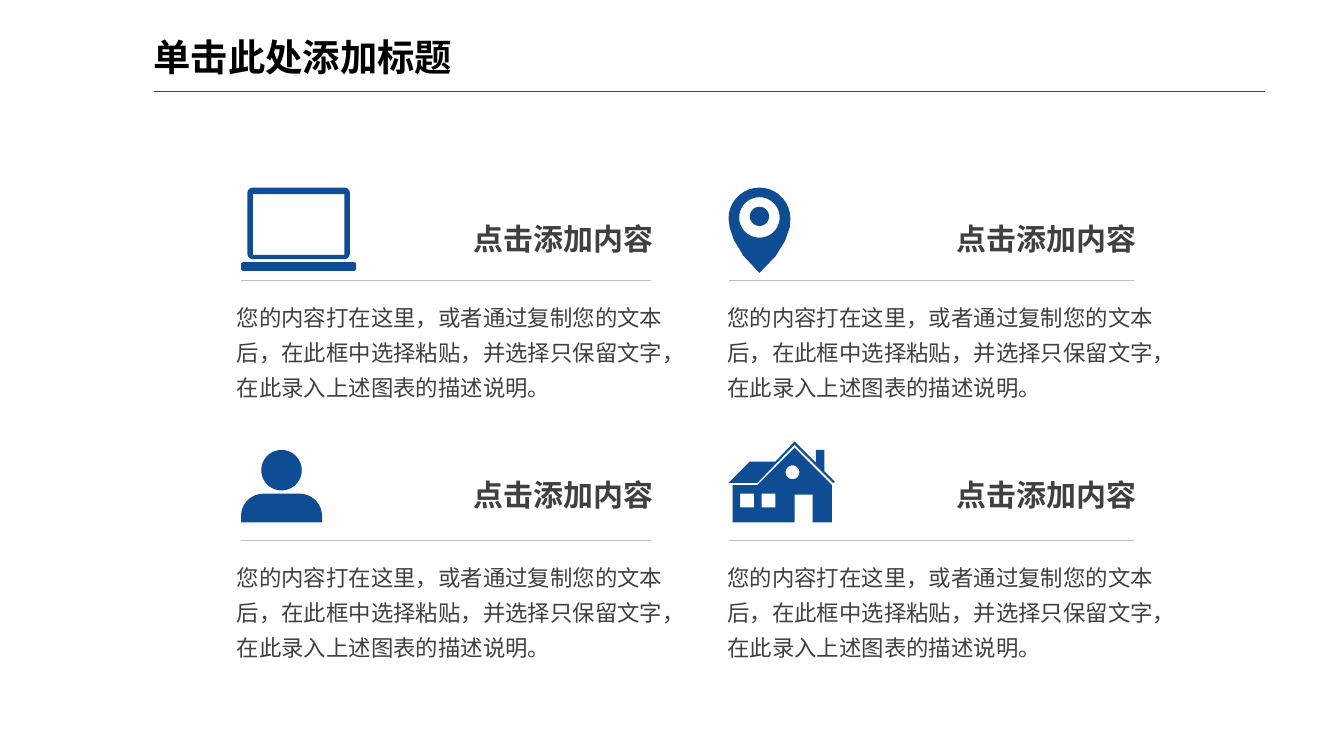
from math import cos, radians, sin

from lxml import etree
from pptx import Presentation, util as u
from pptx.dml.color import RGBColor
from pptx.enum import shapes, text
from pptx.oxml import ns

# Grid of square cells: the slide is 126 columns by 70.9 rows
CELL = u.Inches(0.1)
WIDE, HIGH = 126, 70.9

FONT = "Noto Sans CJK SC"
BLUE = RGBColor(0x0E, 0x4D, 0x93)
GREY = RGBColor(0xBF, 0xBF, 0xBF)
DARK = RGBColor(0x40, 0x40, 0x40)
BLACK = RGBColor(0, 0, 0)

TITLE = "单击此处添加标题"
HEAD = "点击添加内容"
BODY = "您的内容打在这里，或者通过复制您的文本后，在此框中选择粘贴，并选择只保留文字，在此录入上述图表的描述说明。"

COLS = [(22.6, 61, 21.3), (68.3, 106.3, 67.3)]  # rule left, rule right, body left
ROWS = [(26.3, 20.2), (50.7, 44.2)]  # rule, heading top


def cells(*nums):
    return [u.Emu(round(n * CELL)) for n in nums]


# Outlines, in cells from the corner of an icon
def arc(x, y, r, start=0, end=360):
    steps = max(6, (end - start) // 10)
    turns = [radians(start + (end - start) * i / steps) for i in range(steps + 1)]
    return [(x + r * cos(t), y + r * sin(t)) for t in turns]


def box(x, y, w, h, r=0):
    if not r:
        return [(x, y), (x + w, y), (x + w, y + h), (x, y + h)]
    return (arc(x + r, y + r, r, 180, 270) + arc(x + w - r, y + r, r, 270, 360)
            + arc(x + w - r, y + h - r, r, 0, 90) + arc(x + r, y + h - r, r, 90, 180))


def laptop():
    return [box(0, 7, 10.8, 0.8, 0.2), box(0.6, 0, 9.6, 6.7, 0.5),
            box(1.1, 0.6, 8.6, 5.7)]


def pin():
    tip = [(5.75, 3.7), (5.3, 5), (4.4, 6.45), (2.9, 8),
           (1.4, 6.4), (0.5, 4.9), (0.1, 3.7)]
    return [arc(2.9, 2.9, 2.9, 180, 360) + tip, arc(2.9, 2.8, 1.9), arc(2.9, 2.7, 0.9)]


def person():
    body = arc(2.1, 6.2, 2.1, 180, 270) + arc(5.5, 6.2, 2.1, 270, 360)
    return [arc(3.8, 1.9, 1.9), body + [(7.6, 6.8), (0, 6.8)]]


def house():
    walls = [(9.7, 4.1), (6.2, 0.6), (2.7, 4.1), (0.4, 4.1), (0.4, 7.6),
             (6.2, 7.6), (6.2, 5), (7.9, 5), (7.9, 7.6), (9.7, 7.6)]
    roof = [(10, 3.8), (9.8, 3.9), (6.2, 0.3), (2.7, 3.9), (0, 3.9), (2, 1.9),
            (4.4, 1.9), (6.2, 0), (8.2, 2), (8.2, 0.8), (9, 0.8), (9, 2.8)]
    panes = [box(x, 4.9, 1.3, 1.3) for x in (1.1, 3.1)]
    return [walls, *panes, arc(6, 2.9, 0.65), roof]


# Elements
def add_icon(slide, left, top, rings):
    paths = [[cells(left + x, top + y) for x, y in ring] for ring in rings]
    pen = slide.shapes.build_freeform(*paths[0][0])
    for i, pts in enumerate(paths):
        if i:
            pen.move_to(*pts[0])
        pen.add_line_segments(pts[1:], close=True)
    icon = pen.convert_to_shape()
    icon.shadow.inherit = False
    icon.fill.solid()
    icon.fill.fore_color.rgb = BLUE
    icon.line.fill.background()


def add_rule(slide, left, right, y, color):
    rule = slide.shapes.add_connector(
        shapes.MSO_CONNECTOR.STRAIGHT, *cells(left, y, right, y))
    rule.line.color.rgb = color
    rule.line.width = u.Pt(0.75)
    etree.SubElement(rule._element.spPr, ns.qn("a:effectLst"))


def add_run(para, words, size, color, bold=False):
    run = para.add_run()
    run.text = words
    font = run.font
    font.size, font.bold, font.name = u.Pt(size), bold, FONT
    font.color.rgb = color
    props = run._r.get_or_add_rPr()
    props.set("lang", "zh-CN")
    etree.SubElement(props, ns.qn("a:ea")).set("typeface", FONT)


def add_title(slide):
    title = slide.shapes.title
    title.left, title.top, title.width, title.height = cells(13.4, 2.7, 105.2, 5.3)
    frame = title.text_frame
    frame.vertical_anchor = text.MSO_ANCHOR.MIDDLE
    para = frame.paragraphs[0]
    para.alignment = text.PP_ALIGN.LEFT
    add_run(para, TITLE, 25.2, BLACK, True)


def add_text(slide, place, wrap):
    frame = slide.shapes.add_textbox(*cells(*place)).text_frame
    frame.word_wrap = wrap
    frame.margin_left = frame.margin_right = u.Inches(0.09)
    frame.margin_top = frame.margin_bottom = u.Inches(0.05)
    return frame


def add_card(slide, col, row, icon, top):
    left, right, inset = col
    rule, head = row
    add_icon(slide, left, top, icon())
    add_rule(slide, left, right, rule, GREY)

    frame = add_text(slide, (right - 17.7, head, 18.8, 4.3), False)
    frame.vertical_anchor = text.MSO_ANCHOR.MIDDLE
    para = frame.paragraphs[0]
    para.alignment = text.PP_ALIGN.RIGHT
    add_run(para, HEAD, 20.2, DARK, True)

    para = add_text(slide, (inset, rule + 1, 42, 10.9), True).paragraphs[0]
    para.line_spacing = 1.3
    add_run(para, BODY, 15.1, DARK)


def main():
    deck = Presentation()
    deck.slide_width, deck.slide_height = cells(WIDE, HIGH)
    slide = deck.slides.add_slide(deck.slide_layouts.get_by_name("Title Only"))

    # Header
    add_rule(slide, 14.4, 118.6, 8.6, BLUE)
    add_title(slide)

    # Two by two cards, row by row
    icons = [(laptop, 17.6), (pin, 17.6), (person, 42.2), (house, 41.4)]
    for i, (icon, top) in enumerate(icons):
        add_card(slide, COLS[i % 2], ROWS[i // 2], icon, top)

    deck.save("out.pptx")


if __name__ == "__main__":
    main()
